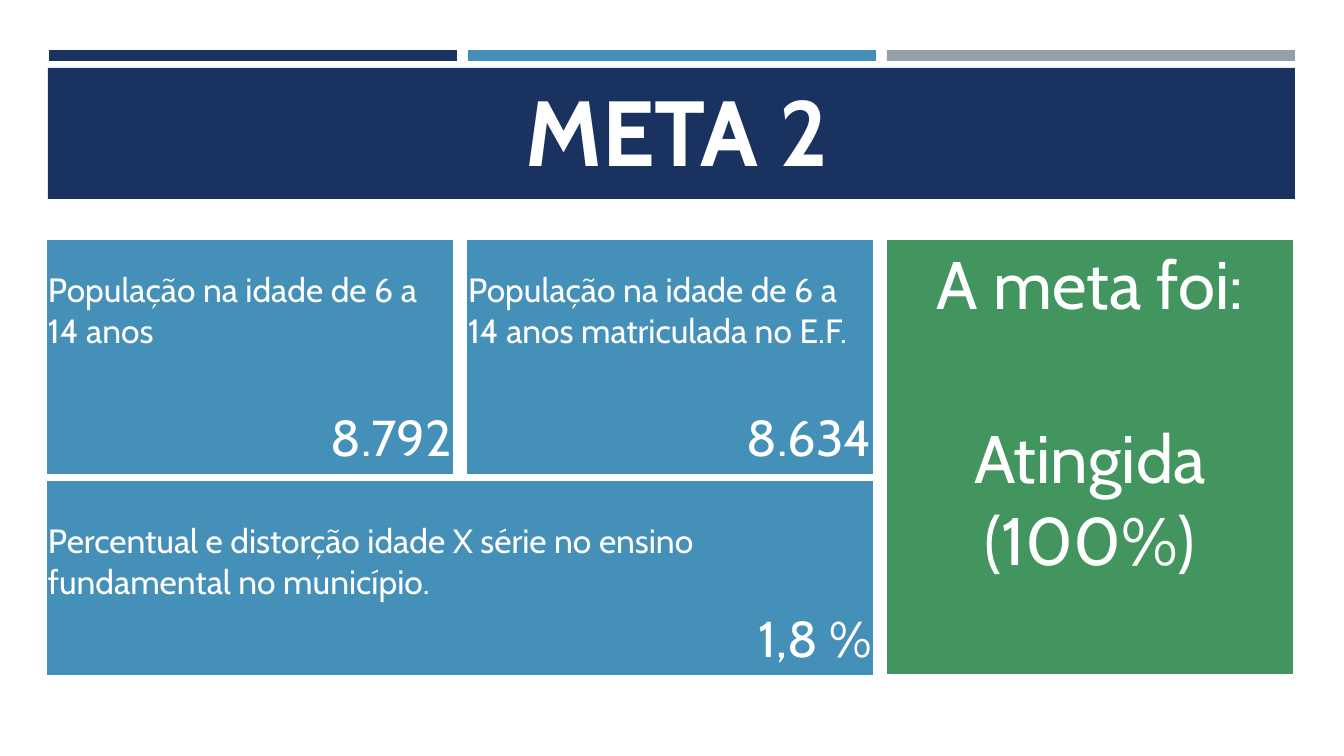
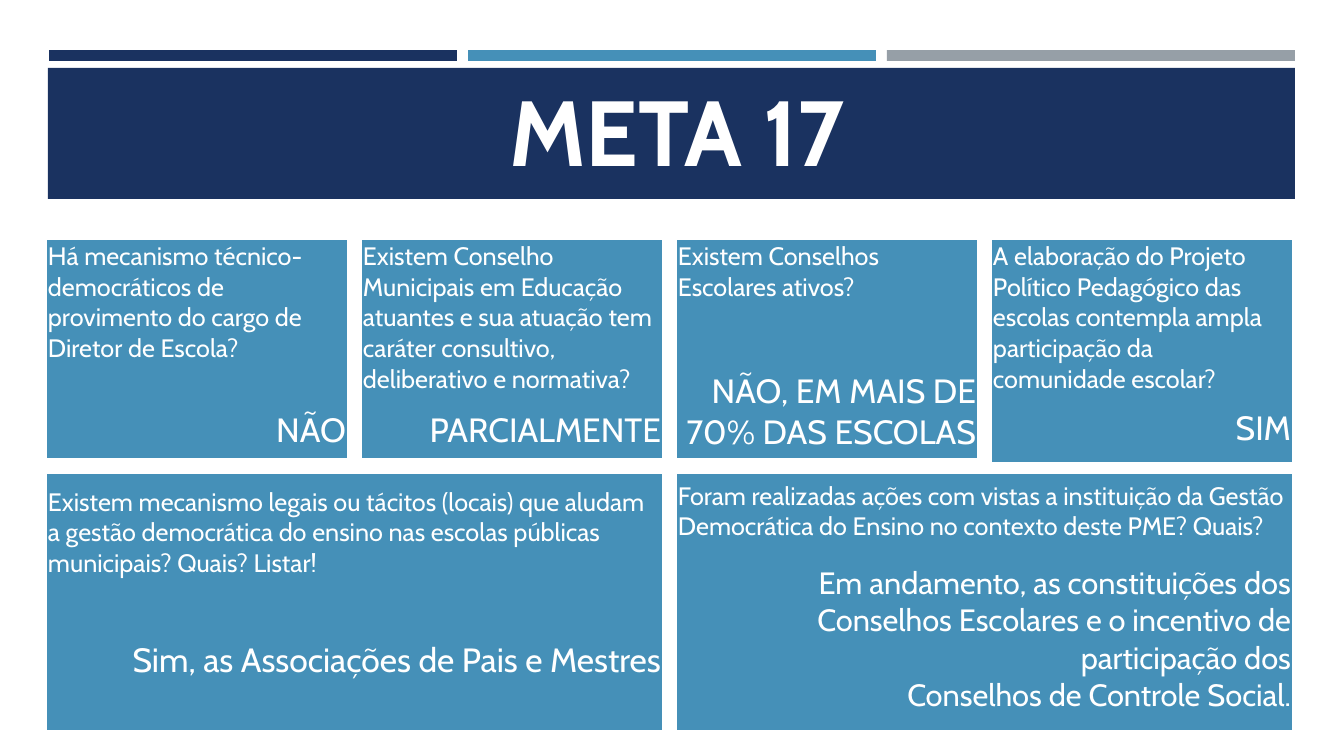
from lxml.etree import SubElement
from pptx import Presentation
from pptx.dml.color import RGBColor
from pptx.enum.shapes import MSO_SHAPE
from pptx.enum.text import MSO_ANCHOR, MSO_AUTO_SIZE, PP_ALIGN
from pptx.oxml.ns import qn
from pptx.util import Emu, Inches, Pt

COLORS = {"navy": "1A3260", "blue": "4590B8", "gray": "969FA7",
          "green": "42955F", "white": "FFFFFF"}
FONT = "Cabin"
NO_STYLE_NO_GRID = "{2D5ABB26-0587-4C30-8999-92F81FD0307C}"
PX = 12192000 / 1344
LEFT, TOP = 47, 240
T, M, B = MSO_ANCHOR.TOP, MSO_ANCHOR.MIDDLE, MSO_ANCHOR.BOTTOM
L, C, R = PP_ALIGN.LEFT, PP_ALIGN.CENTER, PP_ALIGN.RIGHT

# Card: first column, columns spanned, top, fill, then its two rows.
# Row: text, height, size, alignment, anchor.
SLIDES = [
    {"title": "META 2", "col": 406, "gap": 14, "cards": [
        (0, 1, TOP, "blue", [
            ("População na idade de 6 a 14 anos", 117, 24, L, B),
            ("8.792", 117, 36, R, B)]),
        (1, 1, TOP, "blue", [
            ("População na idade de 6 a 14 anos matriculada no E.F.", 117, 24, L, B),
            ("8.634", 117, 36, R, B)]),
        (0, 2, 481, "blue", [
            ("Percentual e distorção idade X série no ensino fundamental no município.",
             127, 24, L, B),
            ("1,8 %", 67, 36, R, B)]),
        (2, 1, TOP, "green", [
            ("A meta foi:", 91, 48, C, B),
            ("Atingida (100%)", 343, 48, C, M)]),
    ]},
    {"title": "META 17", "col": 300, "gap": 15, "cards": [
        (0, 1, TOP, "blue", [
            ("Há mecanismo técnico-democráticos de provimento do cargo de "
             "Diretor de Escola?", 168, 18, L, T),
            ("NÃO", 50, 24, R, M)]),
        (1, 1, TOP, "blue", [
            ("Existem Conselho Municipais em Educação atuantes e sua atuação tem "
             "caráter consultivo, deliberativo e normativa?", 168, 18, L, T),
            ("PARCIALMENTE", 50, 24, R, M)]),
        (2, 1, TOP, "blue", [
            ("Existem Conselhos Escolares ativos?", 75, 18, L, T),
            ("NÃO, EM MAIS DE 70% DAS ESCOLAS", 143, 24, R, B)]),
        (3, 1, TOP, "blue", [
            ("A elaboração do Projeto Político Pedagógico das escolas contempla "
             "ampla participação da comunidade escolar?", 159, 18, L, T),
            ("SIM", 62, 24, R, M)]),
        (0, 2, 474, "blue", [
            ("Existem mecanismo legais ou tácitos (locais) que aludam a gestão "
             "democrática do ensino nas escolas públicas municipais? Quais? Listar!",
             122, 18, L, M),
            ("Sim, as Associações de Pais e Mestres", 134, 24, R, M)]),
        (2, 2, 474, "blue", [
            ("Foram realizadas ações com vistas a instituição da Gestão Democrática "
             "do Ensino no contexto deste PME? Quais?", 79, 18, L, M),
            ("Em andamento, as constituições dos Conselhos Escolares e o incentivo "
             "de participação dos\vConselhos de Controle Social.", 177, 22, R, M)]),
    ]},
]

# Left, top, width, height, colour
BANDS = [(49 + 419 * i, 50, 408, 11, color)
         for i, color in enumerate(("navy", "blue", "gray"))]
BANDS.append((48, 68, 1247, 131, "navy"))


def px(*lengths):
    return [Emu(round(n * PX)) for n in lengths]


def rgb(name):
    return RGBColor.from_string(COLORS[name])


def style(p, size, align, bold=False):
    p.alignment = align
    p.font.name, p.font.size, p.font.bold = FONT, Pt(size), bold
    p.font.color.rgb = rgb("white")


def set_up_layout(layout, s):
    """Put the bands and the title frame on the layout; s lends its shape factory."""
    tree = layout.placeholders[0]._element.getparent()
    for i, (*box, color) in enumerate(BANDS):
        band = s.shapes.add_shape(MSO_SHAPE.RECTANGLE, *px(*box))
        band.shadow.inherit = False
        band.fill.solid()
        band.fill.fore_color.rgb = rgb(color)
        band.line.fill.background()
        tree.insert(2 + i, band._element)
    title = layout.placeholders[0]
    title.left, title.top, title.width, title.height = px(73, 78, 1208, 112)
    title.text_frame.vertical_anchor = B
    title.text_frame.auto_size = MSO_AUTO_SIZE.NONE


def add_card(s, x, y, width, color, rows):
    height = sum(row[1] for row in rows)
    table = s.shapes.add_table(len(rows), 1, *px(x, y, width, height)).table
    table.first_row = table.horz_banding = False
    props = table._tbl.tblPr
    for child in list(props):
        props.remove(child)
    SubElement(props, qn("a:tableStyleId")).text = NO_STYLE_NO_GRID
    for i, (text, row_height, size, align, anchor) in enumerate(rows):
        table.rows[i].height = px(row_height)[0]
        cell = table.cell(i, 0)
        cell.fill.solid()
        cell.fill.fore_color.rgb = rgb(color)
        cell.margin_left = cell.margin_right = cell.margin_top = Inches(0.01)
        cell.margin_bottom = Inches(0.05)
        cell.vertical_anchor = anchor
        p = cell.text_frame.paragraphs[0]
        p.text = text
        style(p, size, align)


def main():
    prs = Presentation()
    prs.slide_width, prs.slide_height = px(1344, 756)
    layout = prs.slide_layouts[5]
    for n, content in enumerate(SLIDES):
        s = prs.slides.add_slide(layout)
        if n == 0:
            set_up_layout(layout, s)
        s.shapes.title.text = content["title"]
        style(s.shapes.title.text_frame.paragraphs[0], 66, C, bold=True)
        col, gap = content["col"], content["gap"]
        for first, span, top, color, rows in content["cards"]:
            x = LEFT + first * (col + gap)
            add_card(s, x, top, span * (col + gap) - gap, color, rows)
    prs.save("out.pptx")


if __name__ == "__main__":
    main()
